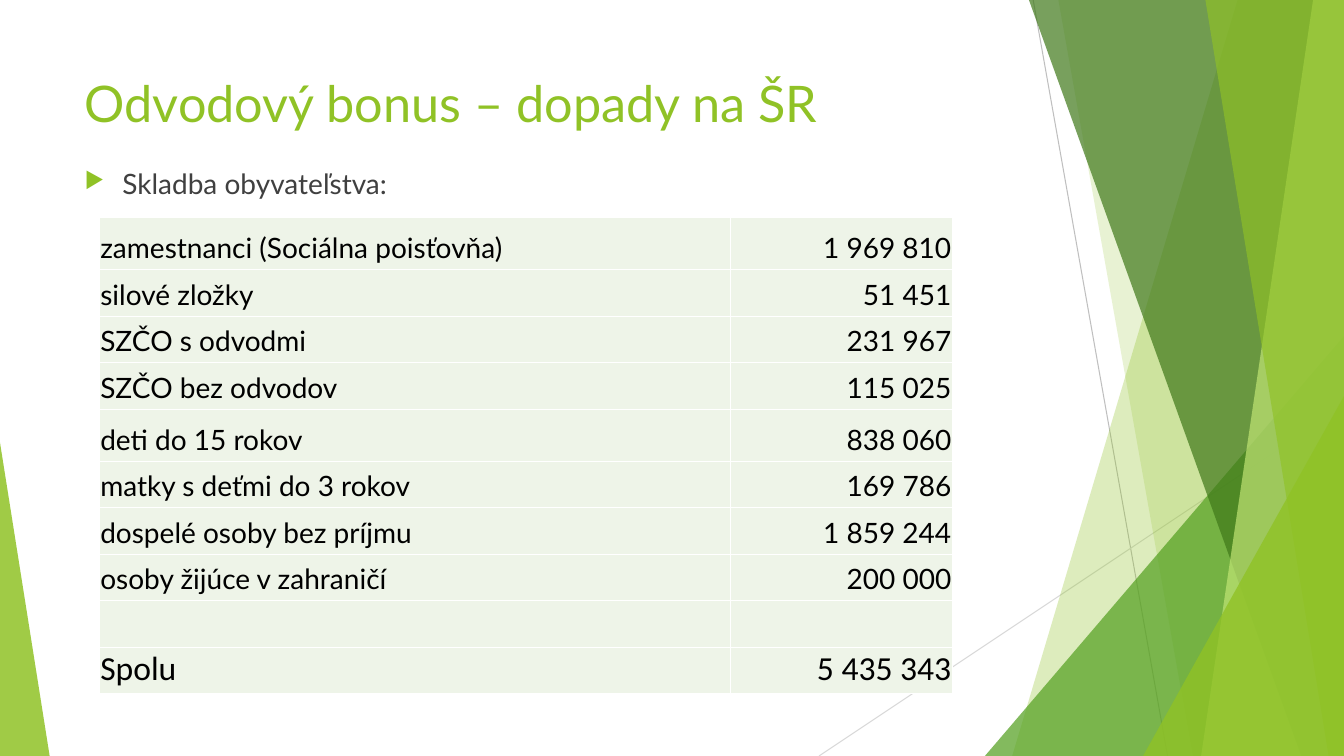
import pptx
import pptx.util
import pptx.oxml
import pptx.oxml.ns
import pptx.dml.color
import pptx.enum.shapes
import pptx.enum.text
from lxml import etree

Pt = pptx.util.Pt
qn = pptx.oxml.ns.qn
SHAPE = pptx.enum.shapes.MSO_SHAPE
ALIGN = pptx.enum.text.PP_ALIGN
ANCHOR = pptx.enum.text.MSO_ANCHOR

WIDTH, HEIGHT = 960, 540
COLORS = {
    "lime": "90C226", "green": "54A021", "forest": "3F7819", "pale": "C0E474",
    "cell": "EEF4E8", "white": "FFFFFF", "black": "000000", "body": "404040",
    "line": "BFBFBF", "faint_line": "D9D9D9",
}

# Ribbons run from the top edge to the bottom edge: (top x, bottom x, color, opacity %)
BACK_RIBBONS = [(884, 723, "lime", 30), (756, 852, "lime", 20)]
FRONT_RIBBONS = [(735, 929.5, "forest", 70), (938, 858, "pale", 70), (861, 949, "lime", 65)]

POPULATION = [
    ("zamestnanci (Sociálna poisťovňa)", "1 969 810"),
    ("silové zložky", "51 451"),
    ("SZČO s odvodmi", "231 967"),
    ("SZČO bez odvodov", "115 025"),
    ("deti do 15 rokov", "838 060"),
    ("matky s deťmi do 3 rokov", "169 786"),
    ("dospelé osoby bez príjmu", "1 859 244"),
    ("osoby žijúce v zahraničí", "200 000"),
    ("", ""),
    ("Spolu", "5 435 343"),
]
TALL_ROWS = (0, 4)


class SlideBuilder:
    def __init__(self, slide, font):
        self.slide = slide
        self.shapes = slide.shapes
        self.font = font

    def color(self, name):
        return pptx.dml.color.RGBColor.from_string(COLORS[name])

    def paint(self, shape, color, opacity):
        shape.shadow.inherit = False
        shape.line.fill.background()
        shape.fill.solid()
        shape.fill.fore_color.rgb = self.color(color)
        srgb = shape._element.spPr.find(qn("a:solidFill")).find(qn("a:srgbClr"))
        etree.SubElement(srgb, qn("a:alpha"), val=str(opacity * 1000))

    def ribbon(self, top_x, bottom_x, color, opacity):
        outline = self.shapes.build_freeform(Pt(top_x), 0)
        corners = [(WIDTH, 0), (WIDTH, HEIGHT), (bottom_x, HEIGHT)]
        outline.add_line_segments([(Pt(x), Pt(y)) for x, y in corners], close=True)
        self.paint(outline.convert_to_shape(), color, opacity)

    def corner_triangle(self, left, top, width, apex, color, opacity):
        triangle = self.shapes.add_shape(
            SHAPE.ISOSCELES_TRIANGLE, Pt(left), Pt(top), Pt(width), Pt(HEIGHT - top))
        triangle.adjustments[0] = apex
        self.paint(triangle, color, opacity)

    def line(self, x1, y1, x2, y2, color):
        connector = self.shapes.add_connector(
            pptx.enum.shapes.MSO_CONNECTOR.STRAIGHT, Pt(x1), Pt(y1), Pt(x2), Pt(y2))
        connector.line.color.rgb = self.color(color)
        connector.line.width = Pt(0.75)
        etree.SubElement(connector._element.spPr, qn("a:effectLst"))

    def set_text(self, frame, text, size, color, align=ALIGN.LEFT, font=None):
        frame.text = text
        paragraph = frame.paragraphs[0]
        paragraph.alignment = align
        for run in paragraph.runs:
            run.font.name = font or self.font
            run.font.size = Pt(size)
            run.font.color.rgb = self.color(color)
        return paragraph

    def title(self, text, left, top, width, height):
        title = self.shapes.title
        title.left, title.top, title.width, title.height = map(Pt, (left, top, width, height))
        title.text_frame.auto_size = pptx.enum.text.MSO_AUTO_SIZE.NONE
        title.text_frame.vertical_anchor = ANCHOR.TOP
        self.set_text(title.text_frame, text, 36, "lime")

    def bullet(self, text, left, top, width, height):
        box = self.shapes.add_textbox(Pt(left), Pt(top), Pt(width), Pt(height))
        box.text_frame.word_wrap = True
        paragraph = self.set_text(box.text_frame, text, 20, "body")
        paragraph.space_before = Pt(10)
        properties = paragraph._p.get_or_add_pPr()
        properties.set("marL", str(Pt(27)))
        properties.set("indent", str(Pt(-27)))
        bullet_color = etree.SubElement(properties, qn("a:buClr"))
        etree.SubElement(bullet_color, qn("a:srgbClr"), val=COLORS["lime"])
        etree.SubElement(properties, qn("a:buSzPct"), val="80000")
        etree.SubElement(properties, qn("a:buChar"), char="▶")

    def cell(self, cell, text, size, align, font):
        cell.margin_left = cell.margin_right = cell.margin_top = Pt(0.75)
        cell.margin_bottom = Pt(3.6)
        cell.vertical_anchor = ANCHOR.BOTTOM
        self.set_text(cell.text_frame, text, size, "black", align, font)
        properties = cell._tc.get_or_add_tcPr()
        for side in ("a:lnL", "a:lnR", "a:lnT", "a:lnB"):
            border = etree.SubElement(properties, qn(side), w=str(Pt(1)))
            fill = etree.SubElement(border, qn("a:solidFill"))
            etree.SubElement(fill, qn("a:srgbClr"), val=COLORS["white"])
        cell.fill.solid()
        cell.fill.fore_color.rgb = self.color("cell")

    def table(self, rows, left, top, column_widths, row_heights):
        table = self.shapes.add_table(
            len(rows), len(column_widths), Pt(left), Pt(top),
            Pt(sum(column_widths)), Pt(sum(row_heights))).table
        table.first_row = table.horz_banding = False
        for column, width in zip(table.columns, column_widths):
            column.width = Pt(width)
        for r, (row, height) in enumerate(zip(rows, row_heights)):
            table.rows[r].height = Pt(height)
            is_total = r == len(rows) - 1
            size, font = (24, "Calibri") if is_total else (20, self.font)
            for c, (text, align) in enumerate(zip(row, (ALIGN.LEFT, ALIGN.RIGHT))):
                self.cell(table.cell(r, c), text, size, align, font)


def main():
    deck = pptx.Presentation()
    deck.slide_width, deck.slide_height = Pt(WIDTH), Pt(HEIGHT)
    page = SlideBuilder(deck.slides.add_slide(deck.slide_layouts[5]), "Lato")

    # Background decoration
    page.line(738, 0, 834, HEIGHT, "line")
    page.line(WIDTH, 290, 585, HEIGHT, "faint_line")
    for ribbon in BACK_RIBBONS:
        page.ribbon(*ribbon)
    page.corner_triangle(703.5, 240, 256.5, 1, "green", 72)
    for ribbon in FRONT_RIBBONS:
        page.ribbon(*ribbon)
    page.corner_triangle(816.5, 283, 143.5, 1, "lime", 80)
    page.corner_triangle(0, 316, 35.5, 0, "lime", 85)

    # Title and lead-in
    page.title("Odvodový bonus – dopady na ŠR", 53.3, 48, 677, 57)
    page.bullet("Skladba obyvateľstva:", 53.3, 115.2, 677, 36)

    # Population table
    heights = [37.2 if r in TALL_ROWS else 33.2 for r in range(len(POPULATION))]
    page.table(POPULATION, 70.9, 155.6, (451, 158.4), heights)

    deck.save("out.pptx")


if __name__ == "__main__":
    main()
